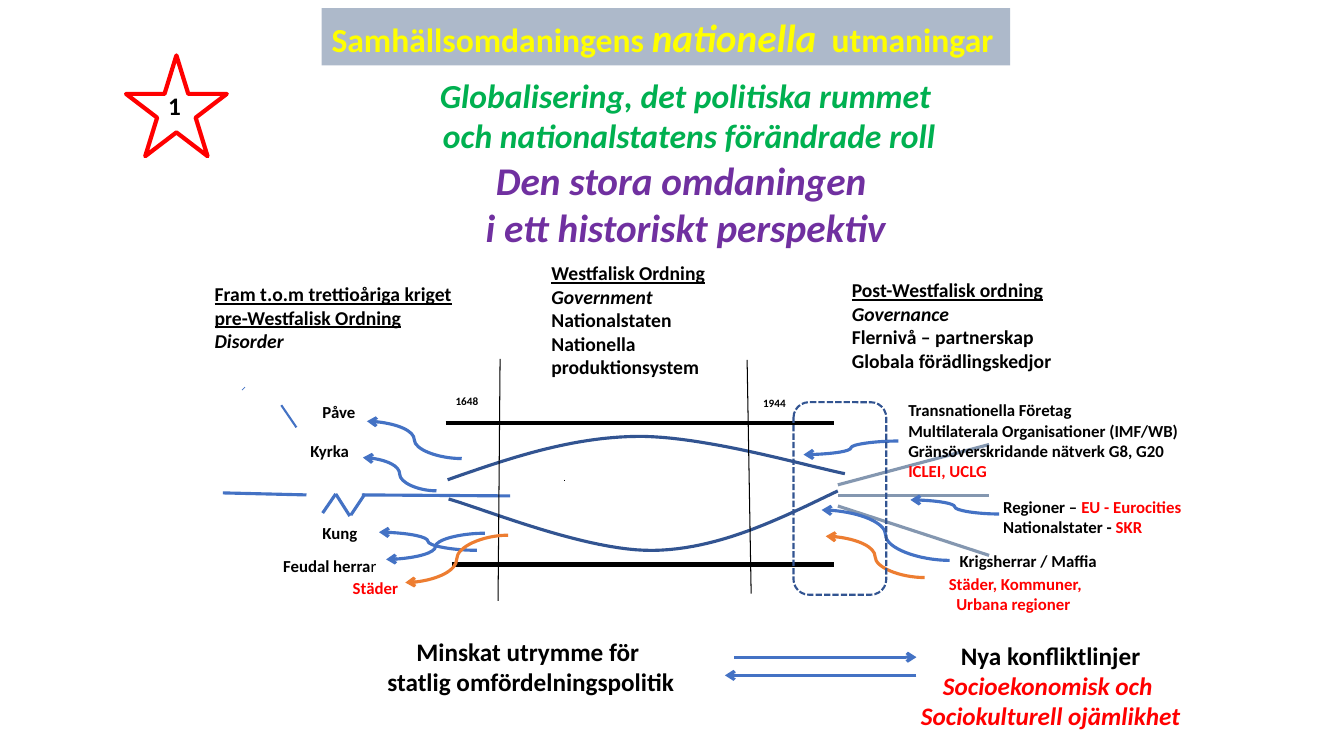
import pptx
import pptx.dml.color
import pptx.enum.dml
import pptx.enum.shapes
import pptx.enum.text
import pptx.oxml
import pptx.oxml.ns
import pptx.util
from pptx.util import Inches

BLACK, WHITE, RED, YELLOW = "000000", "FFFFFF", "FF0000", "FFFF00"
BLUE, NAVY, ORANGE, GRAY = "4472C4", "325491", "ED7D31", "8497B0"
GREEN, PURPLE, BANNER = "00B050", "7030A0", "ADB9CA"
SHAPES = pptx.enum.shapes.MSO_SHAPE
CONNECTORS = pptx.enum.shapes.MSO_CONNECTOR


def paint(color_format, color):
    color_format.rgb = pptx.dml.color.RGBColor.from_string(color)


def set_line(shape, color, width):
    paint(shape.line.color, color)
    shape.line.width = pptx.util.Pt(width)


def run(text, **style):
    return {"text": text, **style}


def add_text(slide, box, paragraphs, size, color=BLACK, wrap=False, center=False, fill=None):
    """Each paragraph is a list of runs; a run may override size, color, bold, italic, underline."""
    shape = slide.shapes.add_textbox(*map(Inches, box))
    frame = shape.text_frame
    frame.word_wrap = wrap
    frame.auto_size = pptx.enum.text.MSO_AUTO_SIZE.SHAPE_TO_FIT_TEXT
    if fill:
        shape.fill.solid()
        paint(shape.fill.fore_color, fill)
    for index, runs in enumerate(paragraphs):
        paragraph = frame.add_paragraph() if index else frame.paragraphs[0]
        if center:
            paragraph.alignment = pptx.enum.text.PP_ALIGN.CENTER
        for item in runs:
            text_run = paragraph.add_run()
            text_run.text = item["text"]
            font = text_run.font
            font.name = "Calibri"
            font.size = pptx.util.Pt(item.get("size", size))
            font.bold = item.get("bold", True)
            font.italic = item.get("italic")
            font.underline = item.get("underline")
            paint(font.color, item.get("color", color))
    return shape


def add_line(slide, start, end, color=BLUE, width=2.25, arrow=False, curved=False):
    kind = CONNECTORS.CURVE if curved else CONNECTORS.STRAIGHT
    connector = slide.shapes.add_connector(kind, *map(Inches, (*start, *end)))
    set_line(connector, color, width)
    if arrow:
        tail = pptx.oxml.parse_xml(f'<a:tailEnd {pptx.oxml.ns.nsdecls("a")} type="arrow"/>')
        connector.line._get_or_add_ln().append(tail)
    effects = pptx.oxml.parse_xml(f'<a:effectLst {pptx.oxml.ns.nsdecls("a")}/>')
    connector._element.spPr.append(effects)
    return connector


def add_curved_arrow(slide, start, end, color=BLUE):
    return add_line(slide, start, end, color, arrow=True, curved=True)


def add_shape(slide, kind, box, color, width, fill=None):
    shape = slide.shapes.add_shape(kind, *map(Inches, box))
    shape.shadow.inherit = False
    set_line(shape, color, width)
    if fill:
        shape.fill.solid()
        paint(shape.fill.fore_color, fill)
    else:
        shape.fill.background()
    return shape


def add_bezier(slide, points, color, width, steps=24):
    """Draw joined cubic Bézier segments: a start point, then three points per segment."""
    outline = []
    for first in range(0, len(points) - 1, 3):
        a, b, c, d = points[first:first + 4]
        for step in range(1, steps + 1):
            t = step / steps
            weights = ((1 - t) ** 3, 3 * t * (1 - t) ** 2, 3 * t ** 2 * (1 - t), t ** 3)
            outline.append(tuple(
                Inches(sum(w * p[axis] for w, p in zip(weights, (a, b, c, d))))
                for axis in (0, 1)))
    builder = slide.shapes.build_freeform(*map(Inches, points[0]))
    builder.add_line_segments(outline, close=False)
    shape = builder.convert_to_shape()
    shape.shadow.inherit = False
    shape.fill.background()
    set_line(shape, color, width)


def add_headings(slide):
    add_text(slide, (3.19, 0.08, 6.83, 0.57),
             [[run("Samhällsomdaningens "), run("nationella", size=28, italic=True),
               run("  utmaningar")]], 24, YELLOW, fill=BANNER)
    add_text(slide, (4.24, 0.69, 5.19, 0.91),
             [[run("Globalisering, det politiska rummet ", italic=True)],
              [run("och nationalstatens förändrade roll", italic=True)]], 24, GREEN, center=True)
    add_text(slide, (4.53, 1.5, 4.54, 1.04),
             [[run("Den stora omdaningen ", italic=True)],
              [run("i ett historiskt perspektiv", italic=True)]],
             28, PURPLE, wrap=True, center=True)
    add_shape(slide, SHAPES.STAR_5_POINT, (1.25, 0.55, 1, 1), RED, 3, WHITE)
    add_text(slide, (1.57, 0.85, 0.5, 0.4), [[run("1")]], 18, wrap=True)


def add_eras(slide):
    add_text(slide, (2.03, 2.75, 2.71, 0.81),
             [[run("Fram t.o.m trettioåriga kriget", underline=True)],
              [run("pre-Westfalisk Ordning", underline=True)],
              [run("Disorder", italic=True)]], 14, wrap=True)
    add_text(slide, (5.37, 2.54, 1.95, 1.28),
             [[run("Westfalisk Ordning", underline=True)], [run("Government", italic=True)],
              [run("Nationalstaten")], [run("Nationella produktionsystem")]], 14, wrap=True)
    add_text(slide, (8.35, 2.71, 2.2, 1.04),
             [[run("Post-Westfalisk ordning", underline=True)], [run("Governance", italic=True)],
              [run("Flernivå – partnerskap")], [run("Globala förädlingskedjor")]], 14)
    # Year borders
    add_line(slide, (4.96, 3.56), (4.94, 5.96), BLACK, 0.75)
    add_line(slide, (7.41, 3.57), (7.45, 5.89), BLACK, 0.75)
    add_text(slide, (4.42, 3.86, 0.43, 0.24), [[run("1648")]], 8, fill=WHITE)
    add_text(slide, (7.47, 3.88, 0.43, 0.24), [[run("1944")]], 8)


def add_political_space(slide):
    # Outer limits and the state's room for action
    add_line(slide, (4.42, 4.2), (8.27, 4.2), BLACK, 3)
    add_line(slide, (4.48, 5.6), (8.27, 5.6), BLACK, 3)
    add_bezier(slide, [(4.44, 4.76), (5.04, 4.55), (5.65, 4.34), (6.31, 4.33),
                       (6.96, 4.32), (7.99, 4.62), (8.38, 4.7)], NAVY, 2.25)
    add_bezier(slide, [(8.31, 4.87), (7.71, 5.16), (7.12, 5.45), (6.48, 5.46),
                       (5.83, 5.47), (4.83, 5.06), (4.45, 4.95)], NAVY, 2.25)
    # Branches after 1944
    for start_y, end_y in ((4.92, 4.92), (4.81, 4.41), (5.02, 5.51)):
        add_line(slide, (8.31, start_y), (9.81, end_y), GRAY)
    # Broken line before 1648
    for start, end in (((2.21, 4.89), (3.04, 4.91)), ((3.2, 5.09), (3.33, 4.9)),
                       ((3.33, 4.9), (3.47, 5.12)), ((3.48, 5.11), (3.62, 4.9)),
                       ((3.59, 4.91), (5.06, 4.92))):
        add_line(slide, start, end)
    # Small strokes
    add_line(slide, (2.79, 4.02), (2.94, 4.24), width=1.5)
    add_line(slide, (2.4, 3.87), (2.43, 3.84), width=0.5)
    add_line(slide, (5.6, 4.76), (5.6, 4.77), BLACK, 0.5)


def add_old_actors(slide):
    for label, box, wrap in (("Påve", (3.1, 3.94, 0.53, 0.3), False),
                             ("Kyrka", (2.98, 4.32, 1.55, 0.3), True),
                             ("Kung", (3.1, 5.14, 0.6, 0.3), True)):
        add_text(slide, box, [[run(label)]], 12, wrap=wrap)
    add_text(slide, (2.71, 5.46, 1.14, 0.3),
             [[run("Feudal herra"), run("r", bold=False)]], 12)
    add_text(slide, (3.4, 5.68, 0.65, 0.3), [[run("Städer")]], 12, RED)
    for start, end in (((4.58, 4.55), (3.64, 4.18)), ((4.33, 4.87), (3.6, 4.54)),
                       ((4.73, 5.46), (3.76, 5.28)), ((4.81, 5.29), (3.83, 5.55))):
        add_curved_arrow(slide, start, end)
    add_curved_arrow(slide, (5.04, 5.31), (4.02, 5.78), ORANGE)


def add_new_actors(slide):
    transnational = add_text(
        slide, (8.91, 3.92, 2.91, 0.91),
        [[run("Transnationella Företag")], [run("Multilaterala Organisationer (IMF/WB)")],
         [run("Gränsöverskridande nätverk G8, G20")], [run("ICLEI, UCLG", color=RED)]], 12)
    add_text(slide, (9.85, 4.88, 1.99, 0.71),
             [[run("Regioner – "), run("EU - Eurocities", color=RED)],
              [run("Nationalstater -"), run(" SKR", color=RED)]], 12)
    warlords = add_text(slide, (9.42, 5.41, 1.58, 0.3), [[run("Krigsherrar / Maffia")]], 12)
    add_text(slide, (9.3, 5.64, 1.54, 0.5),
             [[run("Städer, Kommuner,")], [run("Urbana regioner ")]], 12, RED, center=True)
    add_curved_arrow(slide, (8.91, 4.38), (7.97, 4.51)).begin_connect(transnational, 1)
    add_curved_arrow(slide, (9.42, 5.57), (8.15, 5.06)).begin_connect(warlords, 1)
    add_curved_arrow(slide, (9.91, 5.1), (9.03, 4.96))
    add_curved_arrow(slide, (9.17, 5.73), (8.19, 5.32), ORANGE)
    frame = add_shape(slide, SHAPES.ROUNDED_RECTANGLE, (7.87, 3.99, 0.92, 1.91), NAVY, 1.5)
    frame.line.dash_style = pptx.enum.dml.MSO_LINE.SQUARE_DOT


def add_conclusions(slide):
    add_text(slide, (3.68, 6.26, 3.17, 0.71),
             [[run("Minskat utrymme för ")], [run("statlig omfördelningspolitik")]],
             18, center=True)
    add_line(slide, (7.28, 6.52), (9.09, 6.52), arrow=True)
    add_line(slide, (9.09, 6.7), (7.19, 6.7), arrow=True)
    add_text(slide, (9.03, 6.3, 2.78, 1.01),
             [[run("Nya konfliktlinjer")],
              [run("Socioekonomisk och ", color=RED, italic=True)],
              [run("Sociokulturell ojämlikhet", color=RED, italic=True)]], 18, center=True)


def main():
    presentation = pptx.Presentation()
    presentation.slide_width = Inches(13.33)
    presentation.slide_height = Inches(7.5)
    slide = presentation.slides.add_slide(presentation.slide_layouts[6])
    add_political_space(slide)
    add_eras(slide)
    add_old_actors(slide)
    add_new_actors(slide)
    add_headings(slide)
    add_conclusions(slide)
    presentation.save("out.pptx")


if __name__ == "__main__":
    main()
